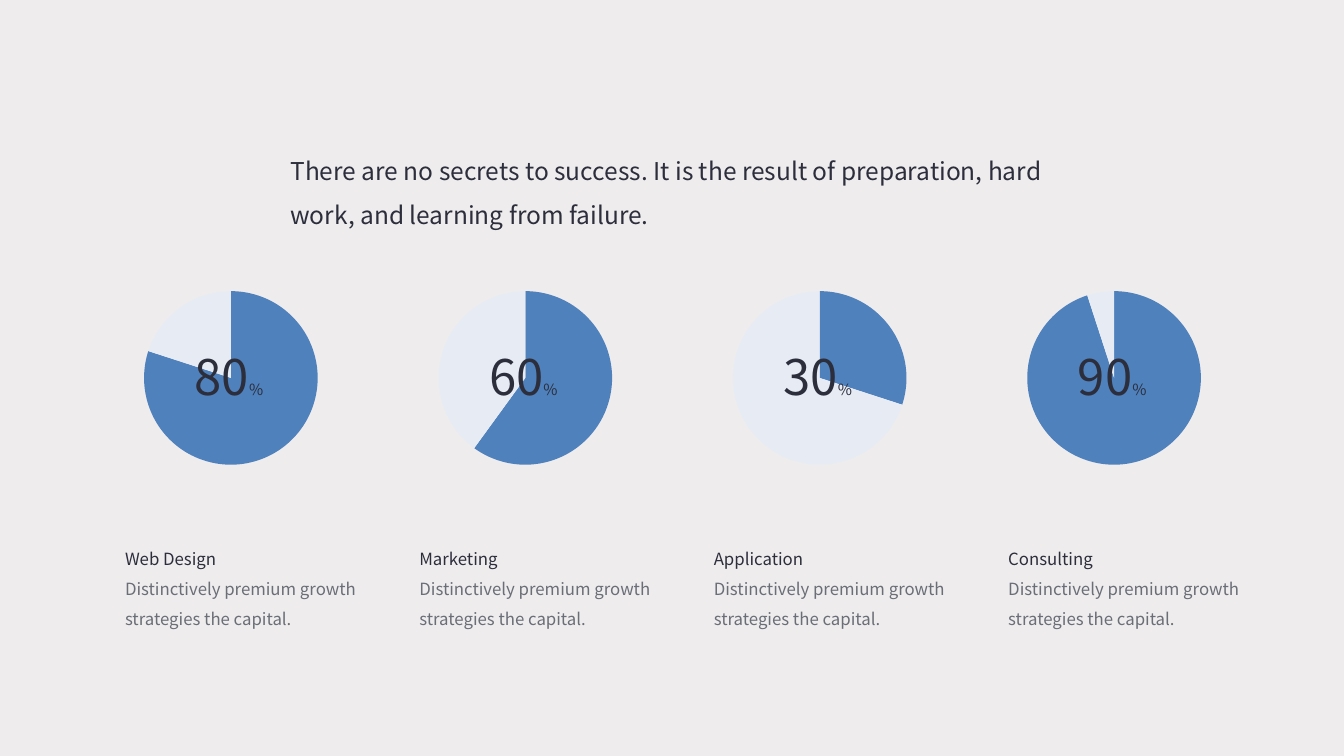
from dataclasses import dataclass

from lxml.etree import SubElement
from pptx import Presentation
from pptx.chart.data import CategoryChartData
from pptx.dml.color import RGBColor
from pptx.enum.chart import XL_CHART_TYPE
from pptx.enum.text import MSO_ANCHOR, MSO_AUTO_SIZE, PP_ALIGN
from pptx.oxml.ns import qn
from pptx.util import Inches, Pt


@dataclass(frozen=True)
class Theme:
    font: str = "Noto Sans CJK SC"
    background: str = "EEECED"
    ink: str = "2C2E3C"
    muted: str = "6A6E77"
    filled: str = "D0B082"
    rest: str = "E7ECF4"
    quote_size: float = 17.5
    number_size: float = 35
    percent_size: float = 11
    body_size: float = 12
    chart_size: float = 10
    line_spacing: float = 1.5


@dataclass(frozen=True)
class Box:
    left: float
    top: float
    width: float
    height: float

    def inner_box(self, left, top, width, height):
        return Box(self.left + left, self.top + top, width, height)

    def lengths(self):
        return [Inches(value) for value in (self.left, self.top, self.width, self.height)]


THEME = Theme()
SLIDE_WIDTH, SLIDE_HEIGHT = 13.33, 7.5
QUOTE_BOX = Box(2.88, 1.4, 7.81, 0.88)
FIRST_COLUMN = Box(1.24, 2.88, 2.37, 3.37)
COLUMN_PITCH = 2.92
PIE_SIZE = 1.74
QUOTE = [
    "There are no secrets to success. It is the result of preparation, hard",
    "work, and learning from failure.",
]
DESCRIPTION = ["Distinctively premium growth", "strategies the capital."]
SKILLS = [
    ("Web Design", "80", 80),
    ("Marketing", "60", 60),
    ("Application", "30", 30),
    ("Consulting", "90", 95),
]


def style_font(font, size, color):
    font.name = THEME.font
    font.size = Pt(size)
    font.color.rgb = RGBColor.from_string(color)


def prepare_frame(frame, wrap=False):
    frame.margin_left = frame.margin_top = frame.margin_right = frame.margin_bottom = 0
    frame.word_wrap = wrap
    frame.auto_size = MSO_AUTO_SIZE.NONE
    frame.vertical_anchor = MSO_ANCHOR.TOP


def fill_lines(frame, lines, size, colors):
    frame.text = "\n".join(lines)
    for paragraph, color in zip(frame.paragraphs, colors):
        paragraph.alignment = PP_ALIGN.LEFT
        paragraph.line_spacing = THEME.line_spacing
        style_font(paragraph.runs[0].font, size, color)


def place_quote(slide, box):
    title = slide.shapes.title
    title.left, title.top, title.width, title.height = box.lengths()
    prepare_frame(title.text_frame, wrap=True)
    fill_lines(title.text_frame, QUOTE, THEME.quote_size, [THEME.ink] * len(QUOTE))


def fill_plot_area(chart):
    plot_area = chart.element.find(".//" + qn("c:plotArea"))
    layout = plot_area.find(qn("c:layout"))
    if layout is None:
        layout = SubElement(plot_area, qn("c:layout"))
        plot_area.insert(0, layout)
    manual = SubElement(layout, qn("c:manualLayout"))
    settings = {
        "layoutTarget": "inner", "xMode": "edge", "yMode": "edge",
        "x": "0.005", "y": "0.005", "w": "0.99", "h": "0.99",
    }
    for name, value in settings.items():
        SubElement(manual, qn(f"c:{name}")).set("val", value)


def place_pie(slide, box, share):
    data = CategoryChartData()
    data.categories = ["1", "2"]
    data.add_series("Series 1", (share, 100 - share))
    chart = slide.shapes.add_chart(XL_CHART_TYPE.PIE, *box.lengths(), data).chart
    chart.has_legend = False
    chart.has_title = False
    style_font(chart.font, THEME.chart_size, "000000")
    plot = chart.plots[0]
    plot.vary_by_categories = False
    series = plot.series[0]
    for slice_owner, color in ((series, THEME.filled), (series.points[1], THEME.rest)):
        slice_owner.format.fill.solid()
        slice_owner.format.fill.fore_color.rgb = RGBColor.from_string(color)
    fill_plot_area(chart)


def place_number(slide, box, number):
    frame = slide.shapes.add_textbox(*box.lengths()).text_frame
    prepare_frame(frame)
    paragraph = frame.paragraphs[0]
    for text, size in ((number, THEME.number_size), ("%", THEME.percent_size)):
        run = paragraph.add_run()
        run.text = text
        style_font(run.font, size, THEME.ink)


def place_caption(slide, box, name):
    frame = slide.shapes.add_textbox(*box.lengths()).text_frame
    prepare_frame(frame)
    colors = [THEME.ink, THEME.muted, THEME.muted]
    fill_lines(frame, [name, *DESCRIPTION], THEME.body_size, colors)


def place_skill(slide, box, name, number, share):
    place_pie(slide, box.inner_box(0.18, 0, PIE_SIZE, PIE_SIZE), share)
    place_number(slide, box.inner_box(0.69, 0.56, 0.71, 0.59), number)
    place_caption(slide, box.inner_box(0, 2.46, box.width, 0.91), name)


def build_skills_slide(presentation):
    slide = presentation.slides.add_slide(presentation.slide_layouts.get_by_name("Title Only"))
    slide.background.fill.solid()
    slide.background.fill.fore_color.rgb = RGBColor.from_string(THEME.background)
    place_quote(slide, QUOTE_BOX)
    for column, skill in enumerate(SKILLS):
        offset = column * COLUMN_PITCH
        box = FIRST_COLUMN.inner_box(offset, 0, FIRST_COLUMN.width, FIRST_COLUMN.height)
        place_skill(slide, box, *skill)


def main():
    presentation = Presentation()
    presentation.slide_width = Inches(SLIDE_WIDTH)
    presentation.slide_height = Inches(SLIDE_HEIGHT)
    build_skills_slide(presentation)
    presentation.save("out.pptx")


if __name__ == "__main__":
    main()
